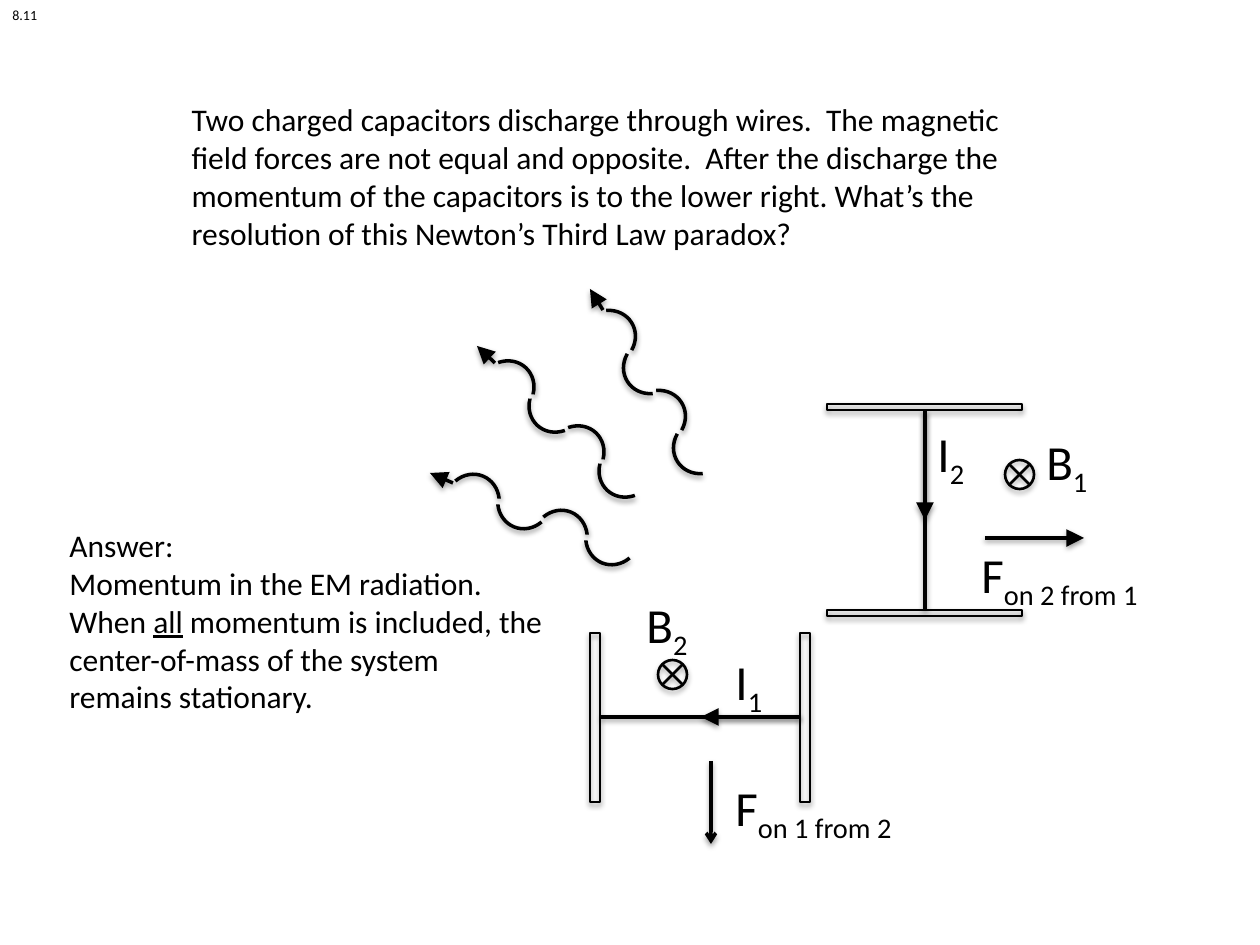
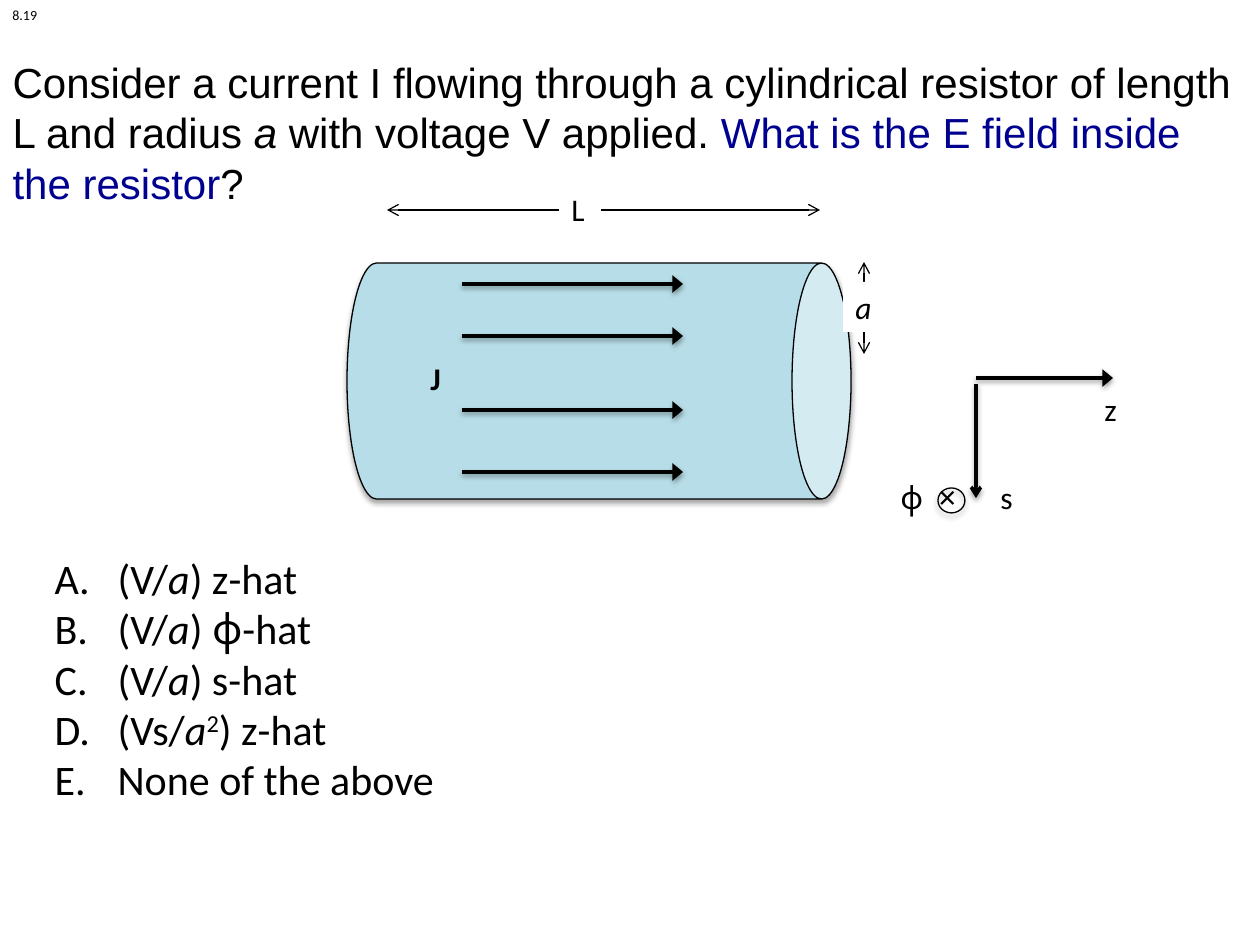
from dataclasses import dataclass
from math import cos, radians, sin

from lxml import etree
from pptx import Presentation
from pptx.dml.color import RGBColor
from pptx.enum.shapes import MSO_CONNECTOR, MSO_SHAPE
from pptx.enum.text import MSO_ANCHOR, MSO_AUTO_SIZE, PP_ALIGN
from pptx.oxml.ns import qn
from pptx.util import Emu, Pt

# Constants
EMU_PER_PX = 914400 / 126
COLORS = {"ink": "000000", "paper": "FFFFFF", "question": "000090", "resistor": "B7DEE8"}
BODY_FONT, TITLE_FONT, SYMBOL_FONT = "Calibri", "Arial", "Noto Sans"
STRAIGHT = MSO_CONNECTOR.STRAIGHT
RECT, ARC, CAN, OVAL = MSO_SHAPE.RECTANGLE, MSO_SHAPE.ARC, MSO_SHAPE.CAN, MSO_SHAPE.OVAL
INTO_PAGE = MSO_SHAPE.FLOWCHART_SUMMING_JUNCTION
LEFT, TOP = PP_ALIGN.LEFT, MSO_ANCHOR.TOP
NO_FIT, FIT_SHAPE = MSO_AUTO_SIZE.NONE, MSO_AUTO_SIZE.SHAPE_TO_FIT_TEXT
TITLE_ONLY, TITLE_AND_CONTENT = 5, 1

# Arc ends as shape adjustments: about 210 and 329 degrees
ARC_ENDS = (126.26, 197.11)
ARC_W, ARC_H = 54, 58


@dataclass
class Label:
    text: str
    x: int
    y: int
    w: int
    h: int = 50
    sub: str = ""
    size: int = 18
    font: str = BODY_FONT
    bold: bool = False
    italic: bool = False
    fill: str = ""


@dataclass
class Line:
    x1: int
    y1: int
    x2: int
    y2: int
    tail: str = ""
    head: str = ""
    width: float = 2
    shadow: bool = True
    tip_length: str = "med"


@dataclass
class Wave:
    x: int
    y: int
    angle: float


def px(n: float) -> Emu:
    return Emu(round(n * EMU_PER_PX))


def rgb(name: str) -> RGBColor:
    return RGBColor.from_string(COLORS[name])


def polar(x: float, y: float, length: float, angle: float) -> tuple[int, int]:
    a = radians(angle)
    return round(x + length * cos(a)), round(y + length * sin(a))


# Text
def write(p, text: str, *, size: int = 18, font: str = BODY_FONT, color: str = "ink",
          bold: bool = False, italic: bool = False, underline: bool = False,
          baseline: int = 0) -> None:
    r = p.add_run()
    r.text = text
    f = r.font
    f.size, f.name, f.bold, f.italic, f.underline = Pt(size), font, bold, italic, underline
    f.color.rgb = rgb(color)
    if baseline:
        f._element.set("baseline", str(baseline * 1000))


def add_box(slide, x: int, y: int, w: int, h: int, wrap: bool = False):
    s = slide.shapes.add_textbox(px(x), px(y), px(w), px(h))
    s.text_frame.word_wrap = wrap
    s.text_frame.auto_size = FIT_SHAPE
    return s


def add_label(slide, label: Label) -> None:
    s = add_box(slide, label.x, label.y, label.w, label.h)
    if label.fill:
        s.fill.solid()
        s.fill.fore_color.rgb = rgb(label.fill)
    p = s.text_frame.paragraphs[0]
    write(p, label.text, size=label.size, font=label.font, bold=label.bold, italic=label.italic)
    if label.sub:
        write(p, label.sub, size=label.size, baseline=-25)


def place(ph, x: int, y: int, w: int, h: int):
    ph.left, ph.top, ph.width, ph.height = px(x), px(y), px(w), px(h)
    tf = ph.text_frame
    tf.word_wrap, tf.auto_size, tf.vertical_anchor = True, NO_FIT, TOP
    tf.paragraphs[0].alignment = LEFT
    return tf


# Shapes and lines
def add_shadow(sp_pr, alpha: int, dist: float) -> None:
    effects = sp_pr.find(qn("a:effectLst"))
    if effects is None:
        effects = etree.SubElement(sp_pr, qn("a:effectLst"))
    if alpha:
        shadow = etree.SubElement(effects, qn("a:outerShdw"), blurRad=str(Pt(3.1)),
                                  dist=str(Pt(dist)), dir="5400000", rotWithShape="0")
        ink = etree.SubElement(shadow, qn("a:srgbClr"), val=COLORS["ink"])
        etree.SubElement(ink, qn("a:alpha"), val=str(alpha * 1000))


def add_shape(slide, kind, x: int, y: int, w: int, h: int, *, fill: str = "",
              width: float = 1.5, rotation: float = 0, alpha: int = 35, dist: float = 1.8):
    s = slide.shapes.add_shape(kind, px(x), px(y), px(w), px(h))
    s.rotation = rotation
    if fill:
        s.fill.solid()
        s.fill.fore_color.rgb = rgb(fill)
    else:
        s.fill.background()
    s.line.color.rgb, s.line.width = rgb("ink"), Pt(width)
    s.shadow.inherit = False
    add_shadow(s._element.spPr, alpha, dist)
    return s


def add_line(slide, line: Line) -> None:
    c = slide.shapes.add_connector(STRAIGHT, px(line.x1), px(line.y1), px(line.x2), px(line.y2))
    c.line.color.rgb, c.line.width = rgb("ink"), Pt(line.width)
    ln = c.line._get_or_add_ln()
    for tag, arrow in (("a:headEnd", line.head), ("a:tailEnd", line.tail)):
        if arrow:
            tip = etree.SubElement(ln, qn(tag), type=arrow)
            if arrow == "triangle":
                tip.set("w", "lg")
                tip.set("len", line.tip_length)
    add_shadow(c._element.spPr, 38 if line.shadow else 0, 1.6)


def add_wave(slide, wave: Wave) -> None:
    for pair in range(2):
        x, y = polar(wave.x, wave.y, 95 * pair, wave.angle)
        crest_and_trough = ((x, y), polar(x, y, 53, wave.angle - 26))
        for turn, (ax, ay) in enumerate(crest_and_trough):
            s = add_shape(slide, ARC, ax, ay, ARC_W, ARC_H, width=2, alpha=38, dist=1.6,
                          rotation=(wave.angle + 180 * turn) % 360)
            for i, end in enumerate(ARC_ENDS):
                s.adjustments[i] = end
    cx, cy = wave.x + ARC_W / 2, wave.y + ARC_H / 2
    add_line(slide, Line(*polar(cx, cy, 28, wave.angle + 204.5),
                         *polar(cx, cy, 52, wave.angle + 193.3),
                         tail="triangle", tip_length="lg"))


def new_slide(prs, layout: int, number: str):
    slide = prs.slides.add_slide(prs.slide_layouts[layout])
    add_label(slide, Label(number, 0, 0, 50, 30, size=8))
    return slide


# Slide 1: discharging capacitors
def build_capacitors(prs) -> None:
    slide = new_slide(prs, TITLE_ONLY, "8.11")
    tf = place(slide.shapes.title, 179, 94, 840, 242)
    write(tf.paragraphs[0],
          "Two charged capacitors discharge through wires.  The magnetic field forces are not "
          "equal and opposite.  After the discharge the momentum of the capacitors is to the "
          "lower right. What’s the resolution of this Newton’s Third Law paradox?")

    # Wires, currents and forces
    for *ends, tail in (
        (601, 717, 800, 717, ""), (925, 610, 925, 411, ""),
        (925, 411, 925, 520, "triangle"), (800, 717, 701, 717, "triangle"),
        (711, 761, 711, 844, "arrow"), (985, 538, 1084, 538, "triangle"),
    ):
        add_line(slide, Line(*ends, tail=tail, tip_length="lg"))

    # Capacitor plates
    for x in (590, 800):
        add_shape(slide, RECT, x, 633, 10, 169)
    for y in (404, 610):
        add_shape(slide, RECT, 827, y, 195, 6)

    # Magnetic fields into the page
    for x, y in ((658, 660), (1005, 460)):
        add_shape(slide, INTO_PAGE, x, y, 29, 29)

    for text, sub, x, y, w in (
        ("I", "1", 723, 645, 58), ("I", "2", 925, 417, 58),
        ("B", "2", 634, 588, 77), ("B", "1", 1034, 425, 77),
        ("F", "on 1 from 2", 723, 771, 222), ("F", "on 2 from 1", 969, 538, 222),
    ):
        add_label(slide, Label(text, x, y, w, 72, sub=sub, size=28))

    # Radiation
    for wave in (Wave(445, 474, 22.4), Wave(580, 309, 57.9), Wave(479, 360, 42.9)):
        add_wave(slide, wave)

    # Answer
    tf = add_box(slide, 57, 520, 504, 204, wrap=True).text_frame
    write(tf.paragraphs[0], "Answer:")
    write(tf.add_paragraph(), "Momentum in the EM radiation.")
    p = tf.add_paragraph()
    write(p, "When ")
    write(p, "all", underline=True)
    write(p, " momentum is included, the center-of-mass of the system remains stationary.")


# Slide 2: cylindrical resistor
def build_resistor(prs) -> None:
    slide = new_slide(prs, TITLE_AND_CONTENT, "8.19")
    p = place(slide.shapes.title, 0, 50, 1260, 258).paragraphs[0]
    for text, fmt in (
        ("Consider a current I flowing through a cylindrical resistor of length L and radius ", {}),
        ("a", {"italic": True}), (" with voltage V applied. ", {}),
        ("What is the E field inside the resistor", {"color": "question"}), ("?", {}),
    ):
        write(p, text, size=24, font=TITLE_FONT, **fmt)

    # Choices
    tf = place(slide.placeholders[1], 42, 546, 1187, 267)
    a, phi = ("a", {"italic": True}), ("ϕ", {"font": SYMBOL_FONT})
    choices = (
        (("(V/", {}), a, (") z-hat", {})),
        (("(V/", {}), a, (") ", {}), phi, ("-hat", {})),
        (("(V/", {}), a, (") s-hat", {})),
        (("(Vs/", {}), a, ("2", {"baseline": 30}), (") z-hat", {})),
        (("None of the above", {}),),
    )
    for i, runs in enumerate(choices):
        p = tf.add_paragraph() if i else tf.paragraphs[0]
        p.space_before = Pt(0)
        p_pr = p._p.get_or_add_pPr()
        p_pr.set("marL", str(px(63)))
        p_pr.set("indent", str(px(-63)))
        etree.SubElement(p_pr, qn("a:buFont"), typeface="+mj-lt")
        etree.SubElement(p_pr, qn("a:buAutoNum"), type="alphaUcPeriod")
        for text, fmt in runs:
            write(p, text, size=24, **fmt)

    # Resistor and current density
    add_shape(slide, CAN, 481, 129, 236, 504, fill="resistor", width=0.75, rotation=90)
    for y in (284, 336, 410, 472):
        add_line(slide, Line(462, y, 683, y, "triangle"))

    # Axes
    add_line(slide, Line(976, 378, 1113, 378, "triangle"))
    add_line(slide, Line(976, 384, 976, 498, "arrow"))
    add_shape(slide, OVAL, 938, 488, 27, 25, width=0.75)

    # Dimensions
    for ends in ((387, 210, 820, 210), (864, 354, 864, 262)):
        add_line(slide, Line(*ends, tail="arrow", head="arrow", width=0.75, shadow=False))

    for label in (
        Label("z", 1092, 384, 42), Label("s", 988, 472, 42),
        Label("ϕ", 888, 472, 50, font=SYMBOL_FONT), Label("×", 926, 472, 50, font=SYMBOL_FONT),
        Label("J", 418, 353, 43, bold=True),
        Label("L", 559, 184, 42, fill="paper"),
        Label("a", 843, 282, 33, italic=True, fill="paper"),
    ):
        add_label(slide, label)


def main() -> None:
    prs = Presentation()
    prs.slide_width, prs.slide_height = px(1260), px(945)
    build_capacitors(prs)
    build_resistor(prs)
    prs.save("out.pptx")


if __name__ == "__main__":
    main()
